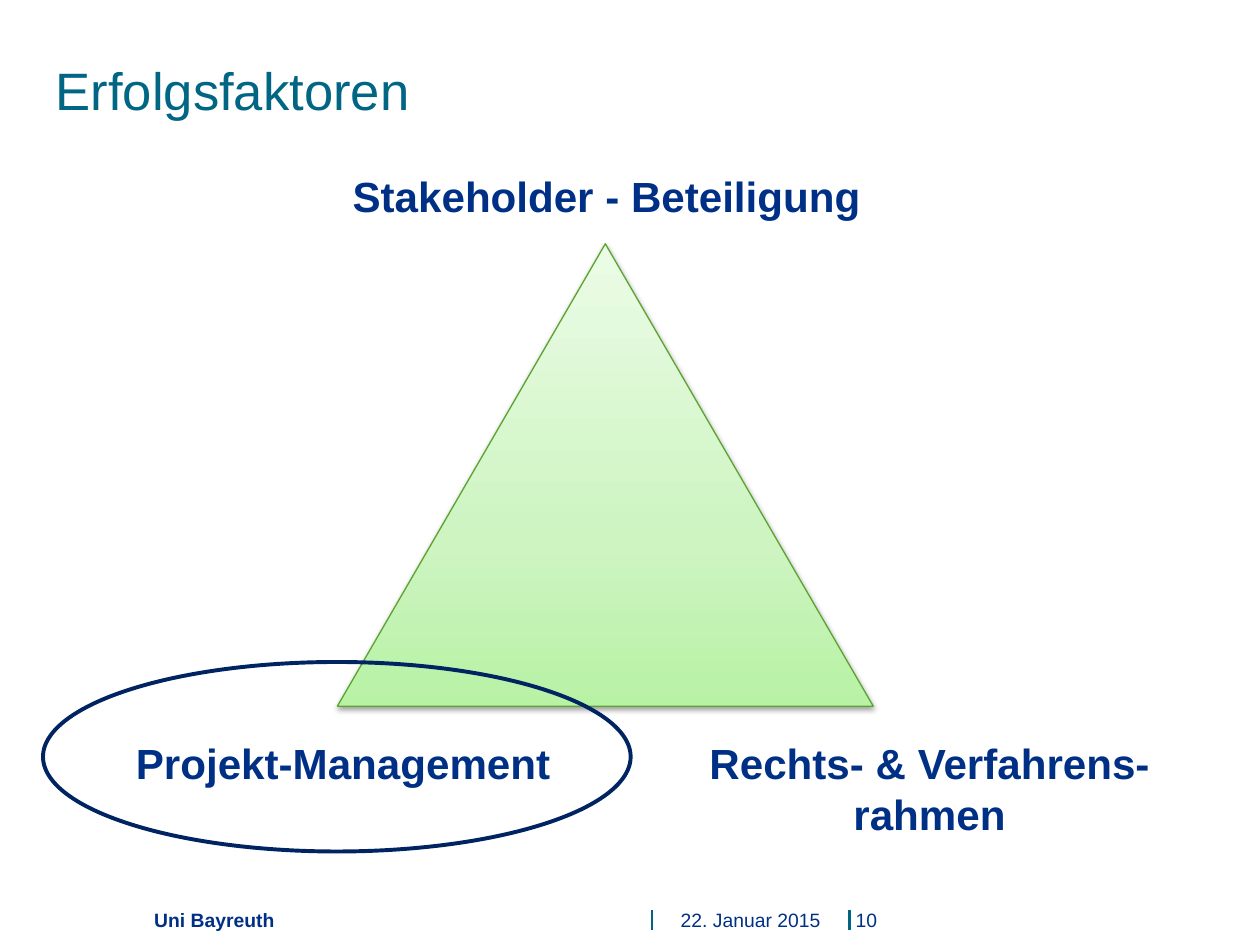
from copy import deepcopy
from dataclasses import dataclass

from lxml import etree
from pptx import Presentation
from pptx.dml.color import RGBColor
from pptx.enum.shapes import MSO_CONNECTOR, MSO_SHAPE
from pptx.enum.text import MSO_ANCHOR, MSO_AUTO_SIZE, PP_ALIGN
from pptx.oxml import parse_xml
from pptx.oxml.ns import nsdecls, qn
from pptx.util import Inches, Pt


@dataclass(frozen=True)
class Theme:
    font: str = "Arial"
    teal: RGBColor = RGBColor.from_string("006683")
    blue: RGBColor = RGBColor.from_string("003085")
    navy: RGBColor = RGBColor.from_string("002462")
    green: RGBColor = RGBColor.from_string("5CA430")
    gradient: tuple = ((0, "B8F2A5"), (0.35, "CDF4C1"), (1, "EBFCE6"))
    title_size: int = 30
    label_size: int = 24
    footer_size: int = 11


theme = Theme()


def write(holder, text, size, color, bold=False, align=PP_ALIGN.LEFT,
          anchor=MSO_ANCHOR.TOP, wrap=True, insets=(0.1, 0.05, 0.1, 0.05)):
    frame = holder.text_frame
    left, top, right, bottom = map(Inches, insets)
    frame_format = {
        "auto_size": MSO_AUTO_SIZE.NONE, "word_wrap": wrap, "vertical_anchor": anchor,
        "margin_left": left, "margin_top": top,
        "margin_right": right, "margin_bottom": bottom,
    }
    for name, value in frame_format.items():
        setattr(frame, name, value)
    paragraph = frame.paragraphs[0]
    paragraph.alignment = align
    run = paragraph.add_run()
    run.text = text
    for name, value in {"name": theme.font, "size": Pt(size), "bold": bold}.items():
        setattr(run.font, name, value)
    run.font.color.rgb = color


presentation = Presentation()
presentation.slide_width = Inches(9.97)
presentation.slide_height = Inches(7.48)
slide = presentation.slides.add_slide(presentation.slide_layouts[5])
shapes = slide.shapes

title = shapes.title
title_place = {"left": 0.34, "top": 0.41, "width": 9.45, "height": 0.98}
for name, value in title_place.items():
    setattr(title, name, Inches(value))
write(title, "Erfolgsfaktoren", theme.title_size, theme.teal)

for x in (5.16, 6.72):
    divider = shapes.add_connector(
        MSO_CONNECTOR.STRAIGHT, Inches(x), Inches(7.2), Inches(x), Inches(7.36))
    divider.line.color.rgb = theme.teal
    divider.line.width = Pt(1.5)
    etree.SubElement(divider._element.spPr, qn("a:effectLst"))

triangle = shapes.add_shape(
    MSO_SHAPE.ISOSCELES_TRIANGLE, Inches(2.67), Inches(1.93), Inches(4.24), Inches(3.66))
triangle.line.color.rgb = theme.green
triangle.line.width = Pt(0.75)
triangle.fill.gradient()
triangle.fill.gradient_angle = 90
stop_list = triangle._element.spPr.find(qn("a:gradFill")).find(qn("a:gsLst"))
stop_list.append(deepcopy(stop_list[-1]))
for stop, (position, color) in zip(triangle.fill.gradient_stops, theme.gradient):
    stop.position = position
    stop.color.rgb = RGBColor.from_string(color)
triangle.shadow.inherit = False
triangle._element.spPr.find(qn("a:effectLst")).append(parse_xml(
    f'<a:outerShdw {nsdecls("a")} blurRad="{Pt(3.1)}" dist="{Pt(1.6)}" dir="5400000" '
    'rotWithShape="0"><a:srgbClr val="000000"><a:alpha val="38000"/></a:srgbClr>'
    '</a:outerShdw>'))

factors = (
    ("Stakeholder - Beteiligung", (2.67, 1.3, 4.26, 0.5), False),
    ("Projekt-Management", (0.96, 5.79, 3.51, 0.81), False),
    ("Rechts- & Verfahrens-rahmen", (5.47, 5.79, 3.77, 0.91), True),
)
for text, place, wrap in factors:
    factor = shapes.add_textbox(*map(Inches, place))
    write(factor, text, theme.label_size, theme.blue, bold=True,
          align=PP_ALIGN.CENTER, wrap=wrap)

highlight = shapes.add_shape(
    MSO_SHAPE.OVAL, Inches(0.34), Inches(5.24), Inches(4.65), Inches(1.5))
highlight.shadow.inherit = False
highlight.fill.background()
highlight.line.color.rgb = theme.navy
highlight.line.width = Pt(2.25)

footers = (
    ("Uni Bayreuth", 1.11, 4.35, True, PP_ALIGN.LEFT, (0.11, 0, 0.1, 0)),
    ("22. Januar 2015", 5.23, 1.42, False, PP_ALIGN.CENTER, (0, 0, 0, 0)),
    ("10", 6.77, 0.51, False, PP_ALIGN.LEFT, (0, 0, 0, 0)),
)
for text, left, width, bold, align, insets in footers:
    footer = shapes.add_textbox(Inches(left), Inches(6.97), Inches(width), Inches(0.4))
    write(footer, text, theme.footer_size, theme.blue, bold=bold, align=align,
          anchor=MSO_ANCHOR.BOTTOM, insets=insets)

presentation.save("out.pptx")
